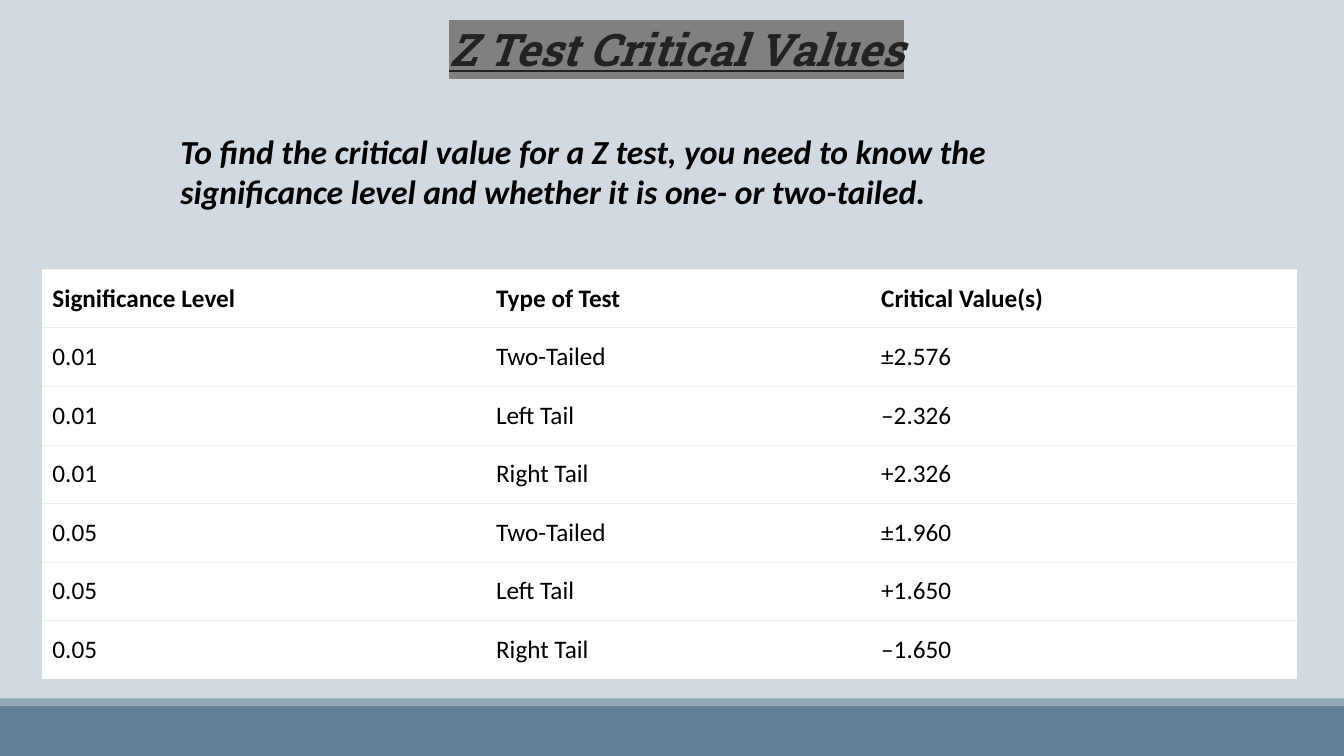
from dataclasses import dataclass

from lxml import etree
from pptx import Presentation
from pptx.dml.color import RGBColor
from pptx.enum import shapes, text
from pptx.oxml import ns
from pptx.util import Inches, Pt


@dataclass(frozen=True)
class Theme:
    background: str = "D1D9E1"
    footer: str = "618197"
    footer_edge: str = "92A9B9"
    title: str = "222222"
    highlight: str = "808080"
    body: str = "000000"
    cell: str = "FFFFFF"
    rule: str = "EEEEE8"
    title_size: int = 32
    intro_size: int = 24
    table_size: int = 18
    title_font: str = "Roboto Slab"
    body_font: str = "Calibri"


theme = Theme()


def write(frame, words, size=theme.table_size, font=theme.body_font, color=theme.body,
          bold=False, italic=False, underline=False, highlight=None, align=None):
    paragraph = frame.paragraphs[0]
    paragraph.alignment = align
    run = paragraph.add_run()
    run.text = words
    run.font.size = Pt(size)
    run.font.name = font
    run.font.bold = bold
    run.font.italic = italic
    run.font.underline = underline
    run.font.color.rgb = RGBColor.from_string(color)
    if highlight:
        mark = etree.Element(ns.qn("a:highlight"))
        etree.SubElement(mark, ns.qn("a:srgbClr"), val=highlight)
        run.font._element.find(ns.qn("a:solidFill")).addnext(mark)


def rule_cell(cell, ruled_sides):
    """Draw a thin line on the ruled sides and none on the others."""
    properties = cell._tc.get_or_add_tcPr()
    for side in "LRTB":
        line = etree.SubElement(properties, ns.qn(f"a:ln{side}"), w=str(Pt(0.5)))
        if side in ruled_sides:
            fill = etree.SubElement(line, ns.qn("a:solidFill"))
            etree.SubElement(fill, ns.qn("a:srgbClr"), val=theme.rule)
        else:
            etree.SubElement(line, ns.qn("a:noFill"))


deck = Presentation()
deck.slide_width, deck.slide_height = Inches(13.33), Inches(7.5)
slide = deck.slides.add_slide(deck.slide_layouts[6])
slide.background.fill.solid()
slide.background.fill.fore_color.rgb = RGBColor.from_string(theme.background)

# Footer bands
for top, height, color in ((7, 0.5, theme.footer), (6.93, 0.07, theme.footer_edge)):
    band = slide.shapes.add_shape(shapes.MSO_SHAPE.RECTANGLE, 0, Inches(top),
                                  deck.slide_width, Inches(height))
    band.shadow.inherit = False
    band.fill.solid()
    band.fill.fore_color.rgb = RGBColor.from_string(color)
    band.line.fill.background()

# Title and introduction
title = slide.shapes.add_textbox(Inches(4.36), Inches(0.17), Inches(6.33), Inches(0.64))
intro = slide.shapes.add_textbox(Inches(1.69), Inches(1.25), Inches(9.36), Inches(0.91))
for box in (title, intro):
    box.text_frame.word_wrap = True
    box.text_frame.auto_size = text.MSO_AUTO_SIZE.SHAPE_TO_FIT_TEXT
write(title.text_frame, "Z Test Critical Values", size=theme.title_size,
      font=theme.title_font, color=theme.title, bold=True, italic=True, underline=True,
      highlight=theme.highlight, align=text.PP_ALIGN.JUSTIFY)
write(intro.text_frame,
      "To find the critical value for a Z test, you need to know the significance level "
      "and whether it is one- or two-tailed.",
      size=theme.intro_size, bold=True, italic=True)

# Critical values
critical_values = [
    ("Significance Level", "Type of Test", "Critical Value(s)"),
    ("0.01", "Two-Tailed", "±2.576"),
    ("0.01", "Left Tail", "–2.326"),
    ("0.01", "Right Tail", "+2.326"),
    ("0.05", "Two-Tailed", "±1.960"),
    ("0.05", "Left Tail", "+1.650"),
    ("0.05", "Right Tail", "–1.650"),
]
column_widths = (4.4, 3.82, 4.22)
last_row = len(critical_values) - 1
table = slide.shapes.add_table(len(critical_values), len(column_widths), Inches(0.42),
                               Inches(2.67), Inches(sum(column_widths)), Inches(4.07)).table
table.horz_banding = False
for column, width in zip(table.columns, column_widths):
    column.width = Inches(width)
for row, values in enumerate(critical_values):
    for col, value in enumerate(values):
        cell = table.cell(row, col)
        rule_cell(cell, "T" if row == last_row else "TB")
        cell.fill.solid()
        cell.fill.fore_color.rgb = RGBColor.from_string(theme.cell)
        cell.vertical_anchor = text.MSO_ANCHOR.MIDDLE
        cell.margin_left = cell.margin_right = Inches(0.1)
        cell.margin_top = cell.margin_bottom = Inches(0.04)
        write(cell.text_frame, value, bold=row == 0)

deck.save("out.pptx")
